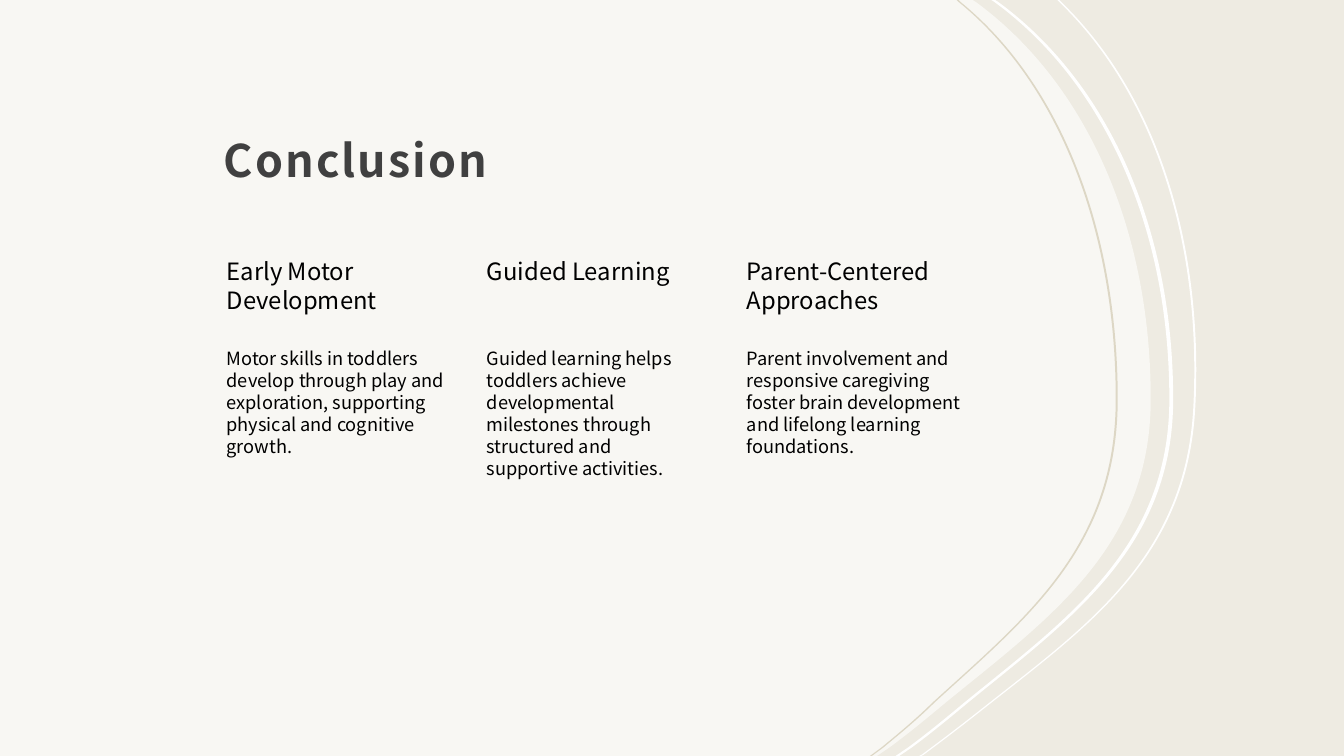
from dataclasses import dataclass

from pptx import Presentation
from pptx.dml.color import RGBColor as RGB
from pptx.enum.text import MSO_ANCHOR as Anchor
from pptx.oxml.ns import qn
from pptx.util import Pt
from lxml.etree import SubElement


@dataclass(frozen=True)
class Theme:
    font: str = "Noto Sans CJK JP"
    background: RGB = RGB(0xEE, 0xEB, 0xE2)
    white: RGB = RGB(0xFF, 0xFF, 0xFF)
    sand: RGB = RGB(0xDD, 0xD7, 0xC5)
    title: RGB = RGB(0x40, 0x40, 0x40)
    text: RGB = RGB(0, 0, 0)
    title_size: int = 32
    heading_size: int = 17
    body_size: int = 13


WIDTH, HEIGHT = 960, 540

EDGE_STEPS = "LCCCL"
PANEL_EDGE = [
    (694.8, 0), (697, 1.4),
    (777, 60), (822, 165), (822, 285),
    (822, 391), (749.5, 441.5), (675.4, 502),
    (661.7, 513.4), (648.7, 524.2), (635, 534.2), (626.4, 540),
]
OUTER_EDGE = [
    (755.3, 0), (757.4, 2.2),
    (824.4, 67.3), (858.2, 172.8), (852.5, 289.4),
    (847.4, 399.6), (774, 448.6), (699.1, 508),
    (685.4, 518.8), (671.8, 529.2), (658.1, 539.3), (656.6, 540),
]
SAND_EDGE = [
    (683.3, 0), (684.7, 1.4),
    (756.7, 60), (797, 165), (797, 285),
    (797, 391), (732.2, 441.5), (666, 502),
    (654.5, 513.4), (641.5, 524.2), (629.3, 534.2), (621.4, 540),
]

COLUMNS = [
    ("Early Motor Development",
     "Motor skills in toddlers develop through play and exploration, "
     "supporting physical and cognitive growth."),
    ("Guided Learning",
     "Guided learning helps toddlers achieve developmental milestones "
     "through structured and supportive activities."),
    ("Parent-Centered Approaches",
     "Parent involvement and responsive caregiving foster brain development "
     "and lifelong learning foundations."),
]


class Deck:
    def __init__(self, theme):
        self.theme = theme
        self.prs = Presentation()
        self.prs.slide_width, self.prs.slide_height = Pt(WIDTH), Pt(HEIGHT)
        self.s = self.prs.slides.add_slide(self.prs.slide_layouts[6])
        fill = self.s.background.fill
        fill.solid()
        fill.fore_color.rgb = theme.background

    def area(self, points, steps, color, opacity=100):
        (x, y), *rest = [(round(x * 100), round(y * 100)) for x, y in points]
        builder = self.s.shapes.build_freeform(x, y, scale=Pt(1) / 100)
        builder.add_line_segments(rest, close=False)
        sp = builder.convert_to_shape()
        self.bend(sp, steps)
        sp.shadow.inherit = False
        sp.line.fill.background()
        sp.fill.solid()
        sp.fill.fore_color.rgb = color
        if opacity < 100:
            rgb = next(sp._element.iter(qn("a:srgbClr")))
            SubElement(rgb, qn("a:alpha")).set("val", str(opacity * 1000))

    def bend(self, sp, steps):
        outline = next(sp._element.iter(qn("a:path")))
        lines = iter(outline.findall(qn("a:lnTo")))
        for step in steps:
            line = next(lines)
            if step == "C":
                curve = SubElement(outline, qn("a:cubicBezTo"))
                line.addprevious(curve)
                for part in (line, next(lines), next(lines)):
                    curve.append(part[0])
                    outline.remove(part)
        SubElement(outline, qn("a:close"))

    def ribbon(self, edge, shift, width, color):
        near = [(x + shift, y) for x, y in edge]
        far = [(x + width, y) for x, y in reversed(near)]
        self.area(near + far, EDGE_STEPS + "L" + EDGE_STEPS, color)

    def text(self, box, text, size, color, margins, spacing=1.0,
             bold=False, tracking=0, anchor=Anchor.TOP):
        tf = self.s.shapes.add_textbox(*map(Pt, box)).text_frame
        tf.word_wrap = True
        tf.vertical_anchor = anchor
        (tf.margin_left, tf.margin_top,
         tf.margin_right, tf.margin_bottom) = map(Pt, margins)
        tf.text = text
        p = tf.paragraphs[0]
        p.line_spacing = spacing
        r = p.runs[0]
        r.font.name = self.theme.font
        r.font.size = Pt(size)
        r.font.bold = bold
        r.font.color.rgb = color
        if tracking:
            r.font._element.set("spc", str(round(tracking * 100)))

    def title(self, text):
        self.text((151.2, 34.6, 540, 105.8), text, self.theme.title_size,
                  self.theme.title, (8.6, 8.6, 8.6, 7.2), 1.3,
                  bold=True, tracking=1.5, anchor=Anchor.BOTTOM)

    def column(self, left, heading, body):
        theme = self.theme
        for top, height, text, size in (
                (182.2, 64.8, heading, theme.heading_size),
                (247, 220.3, body, theme.body_size)):
            self.text((left, top, 168.5, height), text, size, theme.text,
                      (10.8, 1.4, 1.4, 1.4))


def main():
    theme = Theme()
    deck = Deck(theme)
    deck.area(PANEL_EDGE + [(0, HEIGHT), (0, 0)], EDGE_STEPS + "LL",
              theme.white, 60)
    deck.ribbon(OUTER_EDGE, 0, 1.4, theme.white)
    deck.ribbon(PANEL_EDGE, 13.3, 2.7, theme.white)
    deck.ribbon(SAND_EDGE, 0, 1.4, theme.sand)
    deck.title("Conclusion")
    for i, (heading, body) in enumerate(COLUMNS):
        deck.column(151.2 + i * 185.76, heading, body)
    deck.prs.save("out.pptx")


if __name__ == "__main__":
    main()
